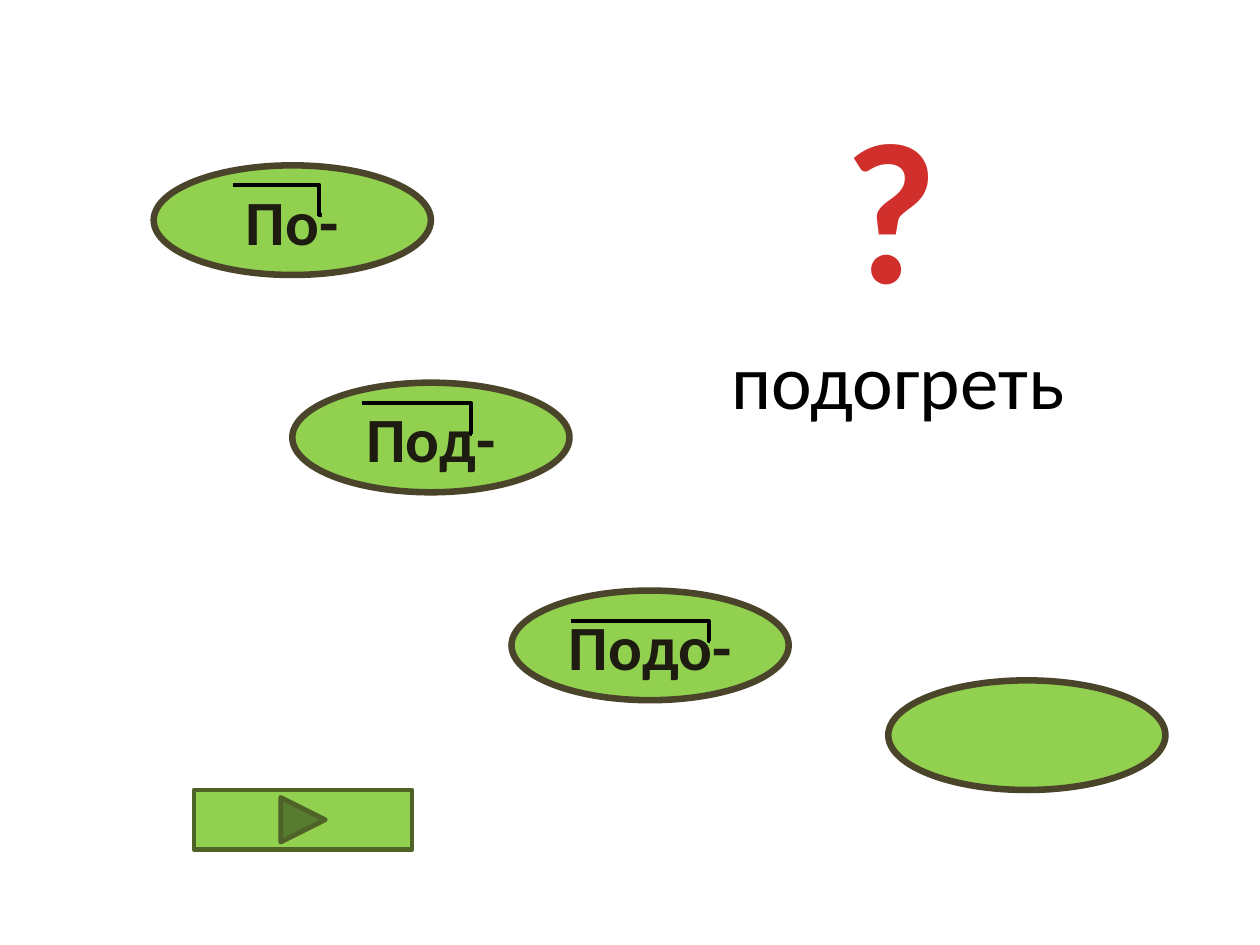
from typing import NamedTuple, Optional

from lxml import etree
from pptx import Presentation
from pptx.dml.color import RGBColor
from pptx.enum import shapes, text
from pptx.oxml.ns import qn
from pptx.util import Inches, Pt

WIDTH, HEIGHT = 10, 7.5
GREEN, BROWN, OLIVE = "92D050", "4A452A", "4F6228"
INK, BLACK, RED = "1E1C11", "000000", "D02F2C"
OVAL_WIDTH, OVAL_HEIGHT = 0.22, 0.116


class Area(NamedTuple):
    left: float
    top: float
    width: float
    height: float

    def lengths(self) -> list[int]:
        sides = (WIDTH, HEIGHT, WIDTH, HEIGHT)
        return [Inches(share * side) for share, side in zip(self, sides)]


class Mark(NamedTuple):
    area: Area
    bend: float


class Prefix(NamedTuple):
    left: float
    top: float
    wording: str = ""
    mark: Optional[Mark] = None


class Label(NamedTuple):
    area: Area
    wording: str
    size: int
    colour: str
    bold: bool
    align: text.PP_ALIGN


PREFIXES = [
    Prefix(0.406, 0.625, "Подо-", Mark(Area(0.453, 0.657, 0.11, 0.021), 0.995)),
    Prefix(0.705, 0.72),
    Prefix(0.122, 0.175, "По-", Mark(Area(0.185, 0.196, 0.071, 0.031), 0.965)),
    Prefix(0.232, 0.405, "Под-", Mark(Area(0.287, 0.427, 0.087, 0.032), 0.999)),
]
LABELS = [
    Label(Area(0.571, 0.345, 0.315, 0.112), "подогреть", 44, BLACK, False, text.PP_ALIGN.LEFT),
    Label(Area(0.634, 0.08, 0.146, 0.272), "?", 115, RED, True, text.PP_ALIGN.CENTER),
]


def colour(code: str) -> RGBColor:
    return RGBColor.from_string(code)


def write(shape, wording: str, size: int, code: str, bold: bool, align) -> None:
    shape.text_frame.text = wording
    para = shape.text_frame.paragraphs[0]
    para.alignment = align
    font = para.runs[0].font
    font.name, font.size, font.bold = "Calibri", Pt(size), bold
    font.color.rgb = colour(code)


def draw_shape(page, kind, area: Area, line: str, weight: float):
    shape = page.shapes.add_shape(kind, *area.lengths())
    shape.shadow.inherit = False
    shape.fill.solid()
    shape.fill.fore_color.rgb = colour(GREEN)
    shape.line.color.rgb = colour(line)
    shape.line.width = Pt(weight)
    return shape


def draw_mark(page, mark: Mark) -> None:
    left, top, width, height = mark.area.lengths()
    bracket = page.shapes.add_connector(
        shapes.MSO_CONNECTOR.ELBOW, left, top, left + width, top + height
    )
    bracket.line.color.rgb = colour(BLACK)
    bracket.line.width = Pt(2.25)
    properties = bracket._element.spPr
    geometry = properties.find(qn("a:prstGeom"))
    guides = geometry.find(qn("a:avLst"))
    if guides is None:
        guides = etree.SubElement(geometry, qn("a:avLst"))
    etree.SubElement(guides, qn("a:gd"), name="adj1", fmla=f"val {round(mark.bend * 100000)}")
    etree.SubElement(properties, qn("a:effectLst"))


def draw_prefix(page, prefix: Prefix) -> None:
    area = Area(prefix.left, prefix.top, OVAL_WIDTH, OVAL_HEIGHT)
    oval = draw_shape(page, shapes.MSO_SHAPE.OVAL, area, BROWN, 3.75)
    if prefix.wording:
        oval.text_frame.vertical_anchor = text.MSO_ANCHOR.MIDDLE
        write(oval, prefix.wording, 36, INK, True, text.PP_ALIGN.CENTER)
    if prefix.mark:
        draw_mark(page, prefix.mark)


def draw_label(page, label: Label) -> None:
    box = page.shapes.add_textbox(*label.area.lengths())
    box.text_frame.word_wrap = True
    box.text_frame.auto_size = text.MSO_AUTO_SIZE.SHAPE_TO_FIT_TEXT
    write(box, *label[1:])


def main() -> None:
    deck = Presentation()
    deck.slide_width, deck.slide_height = Inches(WIDTH), Inches(HEIGHT)
    page = deck.slides.add_slide(deck.slide_layouts[6])
    for prefix in PREFIXES:
        draw_prefix(page, prefix)
    for label in LABELS:
        draw_label(page, label)
    button = Area(0.154, 0.836, 0.173, 0.063)
    draw_shape(page, shapes.MSO_SHAPE.ACTION_BUTTON_FORWARD_OR_NEXT, button, OLIVE, 2.75)
    deck.save("out.pptx")


if __name__ == "__main__":
    main()
